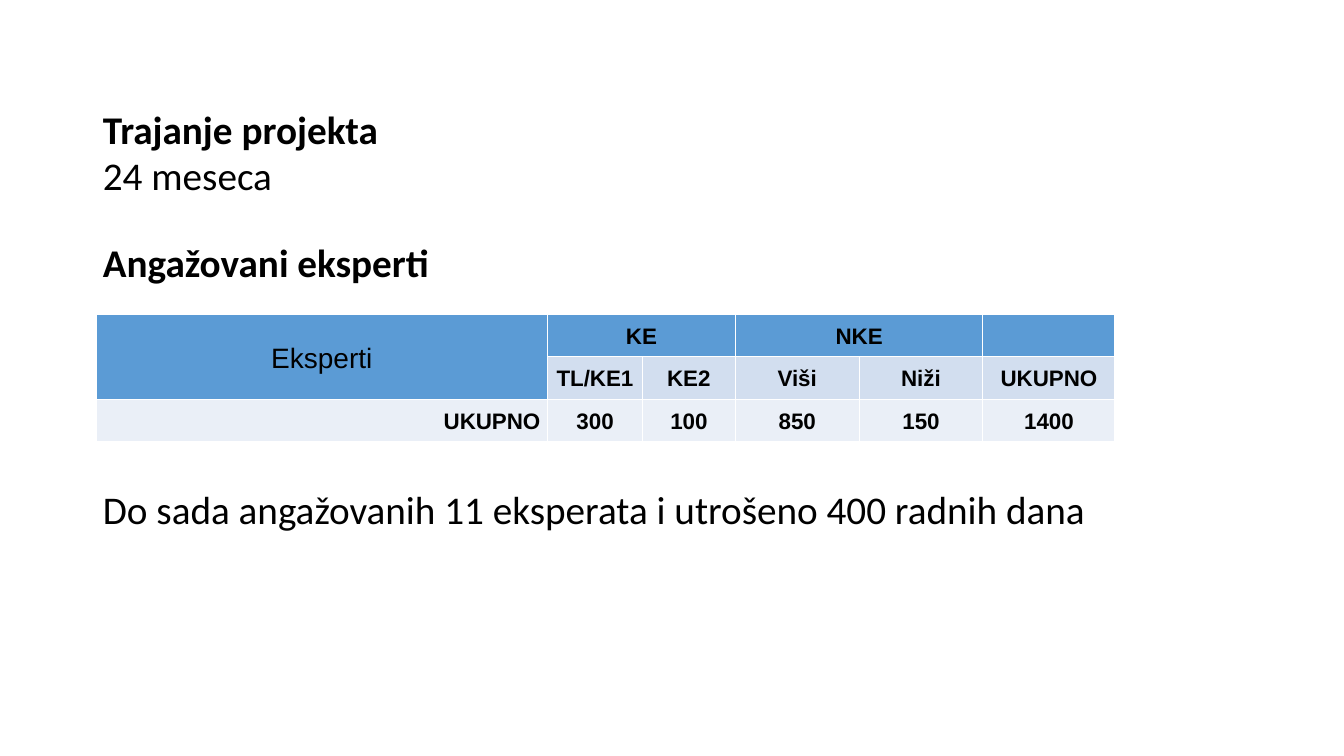
from dataclasses import dataclass
from lxml.etree import SubElement
from pptx import Presentation
from pptx.dml.color import RGBColor
from pptx.enum.text import MSO_ANCHOR, MSO_AUTO_SIZE, PP_ALIGN
from pptx.oxml.ns import qn
from pptx.util import Cm, Pt


@dataclass(frozen=True)
class Theme:
    """Hold the colours, fonts and type sizes of the slide."""
    ink: RGBColor = RGBColor(0, 0, 0)
    head: RGBColor = RGBColor(0x5B, 0x9B, 0xD5)
    sub: RGBColor = RGBColor(0xD2, 0xDE, 0xEF)
    total: RGBColor = RGBColor(0xEA, 0xEF, 0xF7)
    body_font: str = "Calibri"
    cell_font: str = "Arial"
    body_size: Pt = Pt(28)
    label_size: Pt = Pt(20)
    cell_size: Pt = Pt(16)


THEME = Theme()
LINES = [
    ("Trajanje projekta", True, 0),
    ("24 meseca", False, 0),
    ("Angažovani eksperti", True, 28.7),
    ("Do sada angažovanih 11 eksperata i utrošeno 400 radnih dana", False, 143.5),
]
ROWS = [
    ["Eksperti", "KE", "", "NKE", "", ""],
    ["", "TL/KE1", "KE2", "Viši", "Niži", "UKUPNO"],
    ["UKUPNO", "300", "100", "850", "150", "1400"],
]
WIDTHS = [11.38, 2.39, 2.34, 3.12, 3.12, 3.33]
MERGES = [((0, 0), (1, 0)), ((0, 1), (0, 2)), ((0, 3), (0, 4))]


def style(para, font, size, bold):
    """Set the font of a whole paragraph."""
    para.font.name = font
    para.font.size = size
    para.font.bold = bold
    para.font.color.rgb = THEME.ink


def add_body(slide):
    """Fill the body placeholder with plain lines."""
    body = slide.placeholders[1]
    body.left, body.top, body.width, body.height = Cm(2.34), Cm(2.59), Cm(29.2), Cm(12.37)
    frame = body.text_frame
    frame.auto_size = MSO_AUTO_SIZE.NONE
    frame.vertical_anchor = MSO_ANCHOR.TOP
    for num, (text, bold, gap) in enumerate(LINES):
        para = frame.add_paragraph() if num else frame.paragraphs[0]
        para.text = text
        para.line_spacing = 0.98
        para.space_before = Pt(gap)
        props = para._p.get_or_add_pPr()
        props.set("marL", "0")
        props.set("indent", "0")
        SubElement(props, qn("a:buNone"))
        style(para, THEME.body_font, THEME.body_size, bold)


def fill_cell(cell, text, fill, align, size, bold):
    """Set the fill, margins and text of a cell."""
    cell.fill.solid()
    cell.fill.fore_color.rgb = fill
    cell.vertical_anchor = MSO_ANCHOR.MIDDLE
    cell.margin_left = cell.margin_right = Cm(0.18)
    cell.margin_top = cell.margin_bottom = 0
    cell.text = text
    para = cell.text_frame.paragraphs[0]
    para.alignment = align
    para.line_spacing = 1.1
    para.space_after = Pt(3)
    style(para, THEME.cell_font, size, bold)


def add_grid(slide):
    """Add the table of experts."""
    frame = slide.shapes.add_table(
        len(ROWS), len(WIDTHS), Cm(2.42), Cm(7.92), Cm(sum(WIDTHS)), Cm(3.21))
    table = frame.table
    for col, width in zip(table.columns, WIDTHS):
        col.width = Cm(width)
    fills = [THEME.head, THEME.sub, THEME.total]
    for y, (row, fill) in enumerate(zip(ROWS, fills)):
        for x, text in enumerate(row):
            label = (y, x) == (0, 0)
            align = PP_ALIGN.RIGHT if (y, x) == (2, 0) else PP_ALIGN.CENTER
            size = THEME.label_size if label else THEME.cell_size
            fill_cell(table.cell(y, x), text, fill, align, size, not label)
    for start, end in MERGES:
        table.cell(*start).merge(table.cell(*end))


def main():
    """Build and save the slide."""
    deck = Presentation()
    deck.slide_width, deck.slide_height = Cm(33.87), Cm(19.05)
    slide = deck.slides.add_slide(deck.slide_layouts[1])
    title = slide.shapes.title.element
    title.getparent().remove(title)
    add_body(slide)
    add_grid(slide)
    deck.save("out.pptx")


if __name__ == "__main__":
    main()
